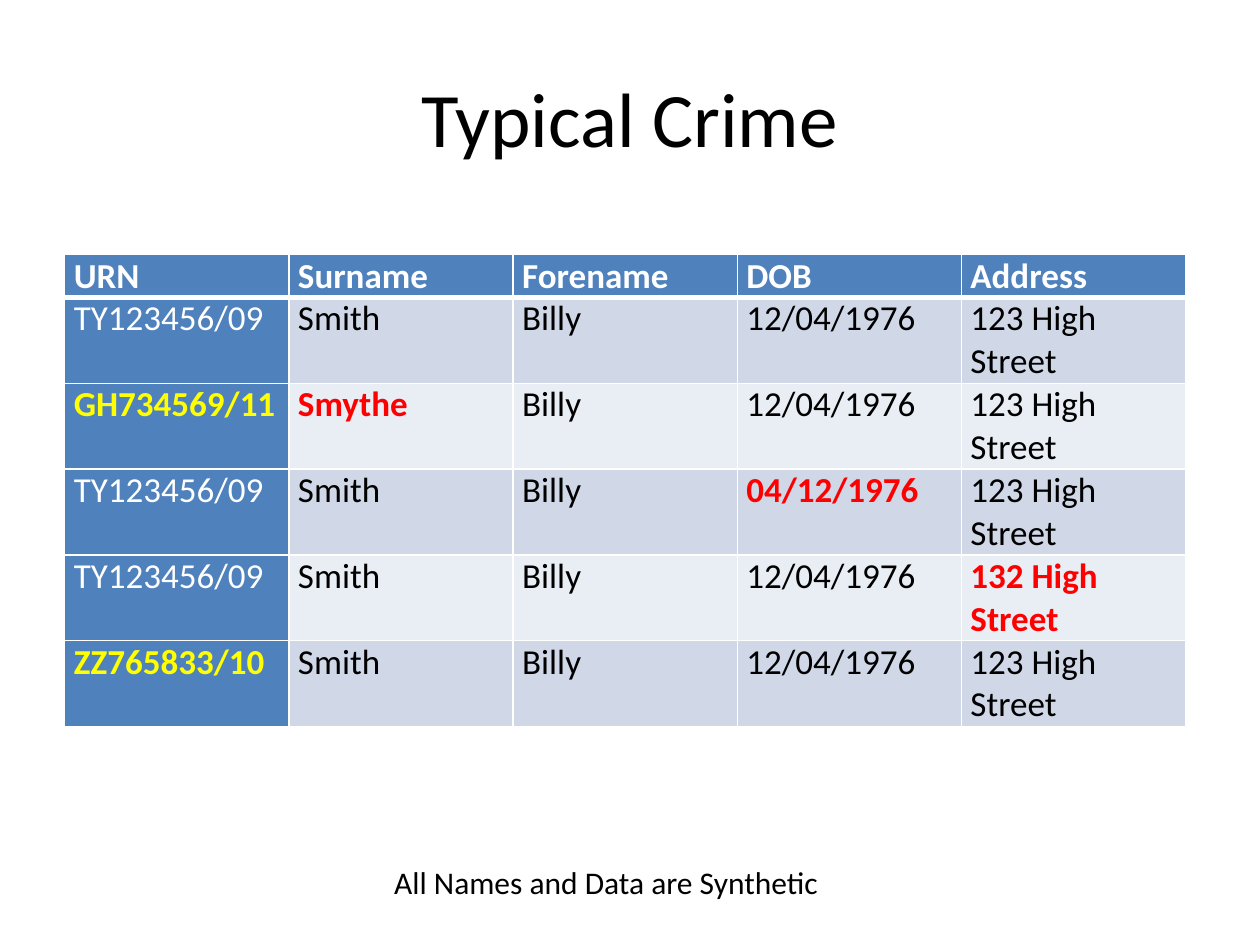
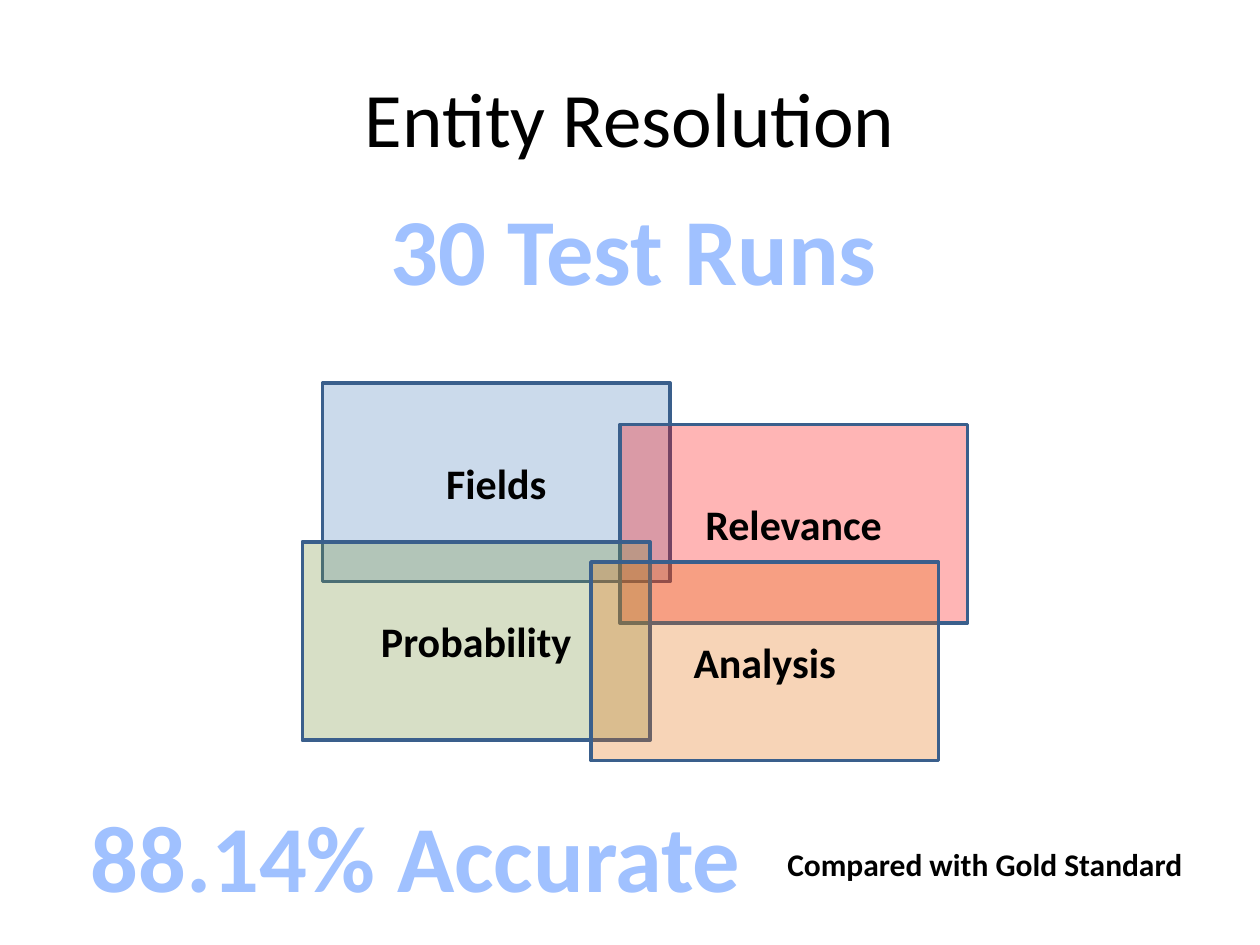
from dataclasses import dataclass

from lxml import etree
from pptx import Presentation
from pptx.dml.color import RGBColor
from pptx.enum.shapes import MSO_SHAPE
from pptx.enum.text import MSO_ANCHOR, PP_ALIGN
from pptx.oxml.ns import qn
from pptx.util import Pt

RECTANGLE = MSO_SHAPE.RECTANGLE
LEFT, CENTER = PP_ALIGN.LEFT, PP_ALIGN.CENTER
MIDDLE = MSO_ANCHOR.MIDDLE
TITLE_ONLY = 5


@dataclass(frozen=True)
class Theme:
    font: str = "Calibri"
    # Colours
    ink: str = "000000"
    white: str = "FFFFFF"
    blue: str = "4F81BD"
    band_dark: str = "D0D8E8"
    band_light: str = "E9EDF4"
    yellow: str = "FFFF00"
    red: str = "FF0000"
    green: str = "77933C"
    orange: str = "E46C0A"
    outline: str = "3A5F8C"
    headline: str = "A0C1FF"
    # Type sizes
    title_size: int = 44
    headline_size: int = 54
    block_size: int = 24
    table_size: int = 20
    note_size: int = 18


THEME = Theme()


def write_text(frame, text, *, size, color=THEME.ink, bold=False,
               align=LEFT, space_before=None):
    """Put one formatted paragraph into a text frame."""
    paragraph = frame.paragraphs[0]
    paragraph.alignment = align
    if space_before is not None:
        paragraph.space_before = Pt(space_before)
    run = paragraph.add_run()
    run.text = text
    run.font.name = THEME.font
    run.font.size = Pt(size)
    run.font.bold = bold
    run.font.color.rgb = RGBColor.from_string(color)


def set_cell_borders(cell, color, top, bottom):
    """Draw all four borders; the sides are one point wide."""
    properties = cell._tc.get_or_add_tcPr()
    widths = {"a:lnL": 1, "a:lnR": 1, "a:lnT": top, "a:lnB": bottom}
    for position, (tag, width) in enumerate(widths.items()):
        border = etree.Element(qn(tag), w=str(Pt(width)))
        fill = etree.SubElement(border, qn("a:solidFill"))
        etree.SubElement(fill, qn("a:srgbClr"), val=color)
        properties.insert(position, border)


class Deck:
    """Holds the style and the slide being built."""

    def __init__(self, theme):
        self.theme = theme
        self.presentation = Presentation()
        self.presentation.slide_width = Pt(720)
        self.presentation.slide_height = Pt(540)
        self.slide = None

    def new_slide(self, heading):
        layout = self.presentation.slide_layouts[TITLE_ONLY]
        self.slide = self.presentation.slides.add_slide(layout)
        title = self.slide.shapes.title
        title.left, title.top = Pt(36), Pt(21.6)
        title.width, title.height = Pt(648), Pt(90)
        title.text_frame.vertical_anchor = MIDDLE
        write_text(title.text_frame, heading,
                   size=self.theme.title_size, align=CENTER)

    def label(self, text, left, top, width, height, **style):
        box = self.slide.shapes.add_textbox(
            Pt(left), Pt(top), Pt(width), Pt(height))
        box.text_frame.word_wrap = False
        write_text(box.text_frame, text, **style)

    def note(self, text, left, top, width, bold=False):
        self.label(text, left, top, width, 29,
                   size=self.theme.note_size, bold=bold)

    def headline(self, text, left, top, width):
        self.label(text, left, top, width, 72.7, bold=True, align=CENTER,
                   size=self.theme.headline_size, color=self.theme.headline)

    def block(self, text, left, top, color):
        """Add a translucent, outlined rectangle."""
        block = self.slide.shapes.add_shape(
            RECTANGLE, Pt(left), Pt(top), Pt(198.7), Pt(113.4))
        block.shadow.inherit = False
        block.fill.solid()
        block.fill.fore_color.rgb = RGBColor.from_string(color)
        tint = block.fill._xPr.find(qn("a:solidFill")).find(qn("a:srgbClr"))
        etree.SubElement(tint, qn("a:alpha"), val="29000")
        block.line.color.rgb = RGBColor.from_string(self.theme.outline)
        block.line.width = Pt(2)
        block.text_frame.vertical_anchor = MIDDLE
        write_text(block.text_frame, text, size=self.theme.block_size,
                   bold=True, align=CENTER)

    def record_table(self, header, records, left, top, column_width, line):
        """Add a table whose values unlike the first record stand out."""
        theme = self.theme
        rows = [header, *records]
        typical = records[0]
        table = self.slide.shapes.add_table(
            len(rows), len(header), Pt(left), Pt(top),
            Pt(column_width * len(header)),
            Pt(line * (2 * len(rows) - 1))).table
        for column in table.columns:
            column.width = Pt(column_width)
        for r, values in enumerate(rows):
            table.rows[r].height = Pt(line if r == 0 else 2 * line)
            band = theme.band_dark if r % 2 else theme.band_light
            for c, value in enumerate(values):
                heading = r == 0
                key = heading or c == 0
                differs = not heading and value != typical[c]
                if differs:
                    color = theme.yellow if key else theme.red
                else:
                    color = theme.white if key else theme.ink
                cell = table.cell(r, c)
                cell.margin_left = cell.margin_right = Pt(5.2)
                cell.margin_top = cell.margin_bottom = 0
                cell.fill.solid()
                cell.fill.fore_color.rgb = RGBColor.from_string(
                    theme.blue if key else band)
                set_cell_borders(cell, theme.white,
                                 top=3 if r == 1 else 1,
                                 bottom=3 if heading else 1)
                write_text(cell.text_frame, value, size=theme.table_size,
                           color=color, bold=heading or differs,
                           space_before=6)


def main():
    deck = Deck(THEME)

    # Crime records with their discrepancies
    deck.new_slide("Typical Crime")
    header = ("URN", "Surname", "Forename", "DOB", "Address")
    records = [
        ("TY123456/09", "Smith", "Billy", "12/04/1976", "123 High Street"),
        ("GH734569/11", "Smythe", "Billy", "12/04/1976", "123 High Street"),
        ("TY123456/09", "Smith", "Billy", "04/12/1976", "123 High Street"),
        ("TY123456/09", "Smith", "Billy", "12/04/1976", "132 High Street"),
        ("ZZ765833/10", "Smith", "Billy", "12/04/1976", "123 High Street"),
    ]
    deck.record_table(header, records, left=37, top=145.5,
                      column_width=128.1, line=24.4)
    deck.note("All Names and Data are Synthetic", 218.2, 489.6, 260)

    # Overlapping parts of the resolution method
    deck.new_slide("Entity Resolution")
    deck.headline("30 Test Runs", 214.6, 105.8, 295.2)
    for factor, left, top, color in (
        ("Fields", 184.3, 218.9, THEME.blue),
        ("Relevance", 354.2, 242.6, THEME.red),
        ("Probability", 172.8, 309.6, THEME.green),
        ("Analysis", 337.7, 321.1, THEME.orange),
    ):
        deck.block(factor, left, top, color)

    # Result
    deck.headline("88.14% Accurate", 42.5, 452.2, 390.2)
    deck.note("Compared with Gold Standard", 442.8, 479.5, 242, bold=True)

    deck.presentation.save("out.pptx")


if __name__ == "__main__":
    main()
